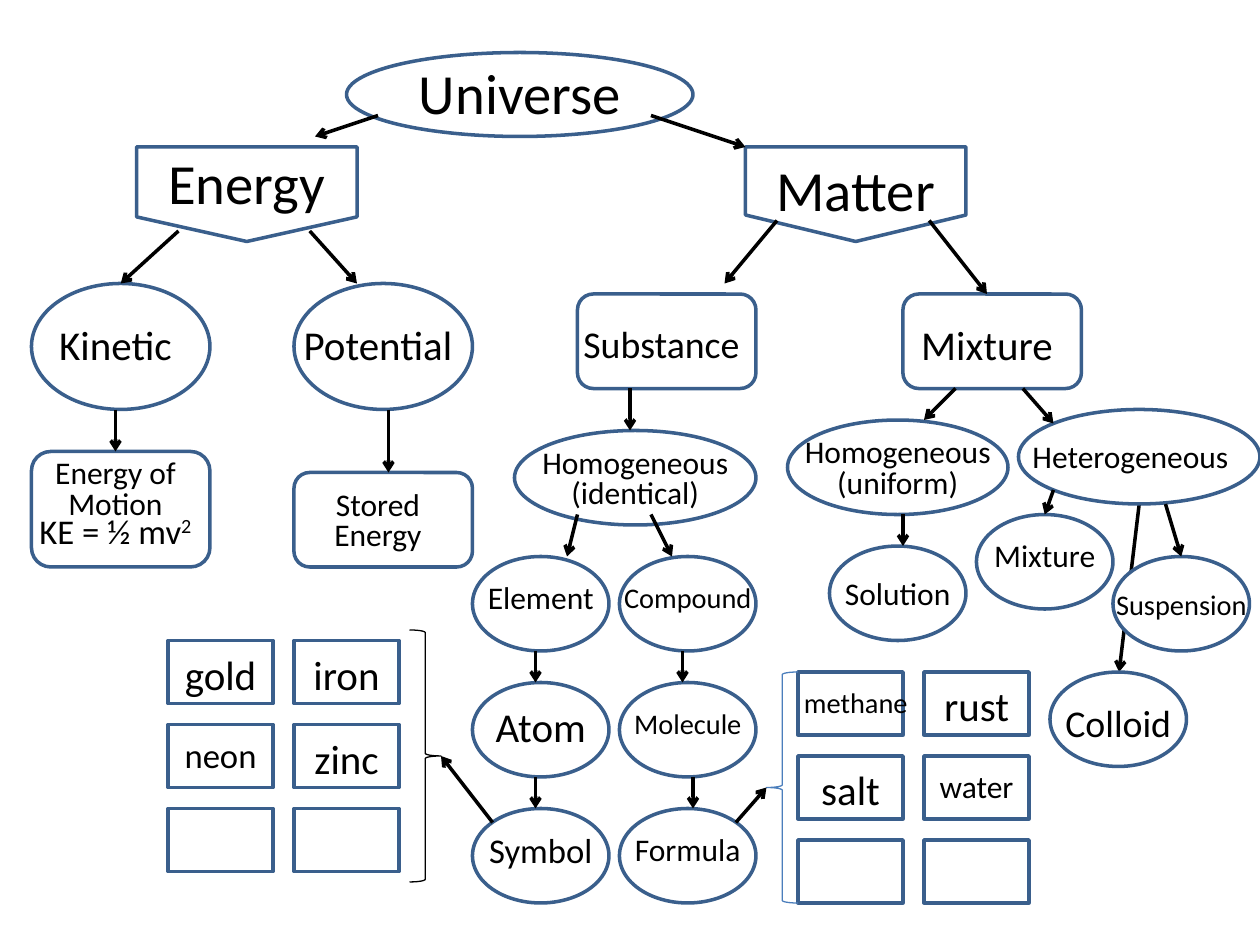
import pptx
import pptx.dml.color
import pptx.enum.shapes
import pptx.enum.text
import pptx.oxml.ns
import pptx.util
from lxml import etree

Pt = pptx.util.Pt
SHAPE = pptx.enum.shapes.MSO_SHAPE
COLORS = {"outline": "3A5F8C", "brace": "4B7EBC", "ink": "000000", "paper": "FFFFFF"}
FONT = "Calibri"

ELEMENT_X, COMPOUND_X = 270, 354
CHAIN_ROWS = [318, 390, 462]
OVAL_SIZE = (78, 54)
TILE_SIZE = (60, 36)
TILE_STEP_X, TILE_STEP_Y = 72, 48
ELEMENT_TILES = (96, 366)
COMPOUND_TILES = (456, 384)

LARGE_OVALS = [
    (198, 30, 198, 48),
    (18, 162, 102, 72), (168, 162, 102, 72),
    (294, 246, 138, 54), (450, 240, 126, 54), (582, 234, 138, 54),
]
MIXTURE_OVALS = [(474, 312), (558, 294), (600, 384)]
SUSPENSION_OVAL = (636, 318)
ROUNDED_BOXES = [
    (330, 168, 102, 54), (516, 168, 102, 54),
    (168, 270, 102, 54), (18, 258, 102, 66),
]
PENTAGONS = [((114, 48, 54, 126), 0.26), ((462, 48, 54, 126), 0.28)]

COLLOID_ARROW = (651, 288, 639.5, 384)
ARROWS = [
    (216, 66, 180, 78), (372, 66, 426, 84),
    (102, 132, 69, 162), (177, 132, 204, 162),
    (66, 234, 66, 258), (222, 234, 222, 270),
    (444, 126, 414, 162), (531, 126, 564, 168),
    (546, 222, 528, 240), (584.5, 222, 602, 242),
    (666, 288, 675, 318), (516, 294, 516, 312), (602, 280, 597, 294),
    (360, 222, 360, 246), (330, 294, 324, 318), (372, 294, 384, 318),
    (306, 372, 306, 390), (306, 444, 306, 462),
    (390, 372, 390, 390), (396, 444, 396, 462),
    (281.5, 470, 252, 432), (420.5, 470, 438, 450),
]

LABELS = [
    ("Universe", (222, 30, 150, 45), 32.4, 1),
    ("Energy", (66, 84, 150, 45), 32.4, 0.9),
    ("Matter", (414, 88, 150, 45), 32.4, 0.9),
    ("Kinetic", (12, 174, 108, 45), 23.4, 1),
    ("Potential", (162, 174, 108, 45), 23.4, 1),
    ("Substance", (324, 174, 108, 45), 21.6, 1),
    ("Mixture", (510, 174, 108, 45), 23.4, 1),
    ("Energy of Motion", (12, 258, 108, 45), 18, 0.8),
    ("Stored Energy", (162, 276, 108, 45), 18, 0.8),
    ("Homogeneous (identical)", (300, 252, 126, 45), 18, 0.8),
    ("Homogeneous (uniform)", (450, 246, 126, 45), 18, 0.8),
    ("Heterogeneous ", (582, 240, 132, 45), 18, 0.8),
    ("Solution", (474, 322, 78, 38), 18, 0.8),
    ("Mixture", (558, 300, 78, 38), 18, 0.8),
    ("Suspension", (630, 328, 90, 38), 16.2, 0.8),
    ("Colloid", (600, 394, 78, 38), 21.6, 1),
    ("Element", (270, 324, 78, 38), 18, 0.8),
    ("Compound", (348, 324, 90, 38), 16.2, 0.8),
    ("Atom", (270, 396, 78, 38), 23.4, 1),
    ("Molecule", (354, 396, 78, 38), 16.2, 0.8),
    ("Symbol", (270, 468, 78, 38), 19.8, 0.9),
    ("Formula", (354, 468, 78, 38), 18, 0.8),
    ("gold", (96, 366, 60, 38), 23.4, 1),
    ("iron", (168, 366, 60, 38), 23.4, 1),
    ("neon", (96, 414, 60, 38), 19.8, 0.9),
    ("zinc", (168, 414, 60, 38), 23.4, 1),
    ("methane", (450, 384, 78, 38), 16.2, 0.8),
    ("rust", (528, 384, 60, 38), 23.4, 1),
    ("salt", (456, 432, 60, 38), 23.4, 1),
    ("water", (528, 432, 60, 38), 18, 0.8),
]


def color(name):
    return pptx.dml.color.RGBColor.from_string(COLORS[name])


def add_outline(slide, kind, box, line="outline", width=2, fill=None):
    shape = slide.shapes.add_shape(kind, *map(Pt, box))
    shape.shadow.inherit = False
    if fill:
        shape.fill.solid()
        shape.fill.fore_color.rgb = color(fill)
    else:
        shape.fill.background()
    shape.line.color.rgb = color(line)
    shape.line.width = Pt(width)
    return shape


def add_pentagon(slide, box, depth):
    shape = add_outline(slide, SHAPE.PENTAGON, box)
    shape.rotation = 90
    shape.adjustments[0] = depth


def add_tiles(slide, origin):
    left, top = origin
    for row in range(3):
        for column in range(2):
            position = (left + column * TILE_STEP_X, top + row * TILE_STEP_Y)
            add_outline(slide, SHAPE.RECTANGLE, position + TILE_SIZE)


def add_arrow(slide, points):
    connector = slide.shapes.add_connector(
        pptx.enum.shapes.MSO_CONNECTOR.STRAIGHT, *map(Pt, points))
    connector.line.color.rgb = color("ink")
    connector.line.width = Pt(2)
    qn = pptx.oxml.ns.qn
    properties = connector.element.spPr
    etree.SubElement(properties.find(qn("a:ln")), qn("a:tailEnd"), type="arrow")
    etree.SubElement(properties, qn("a:effectLst"))


def add_run(paragraph, text, size):
    run = paragraph.add_run()
    run.text = text
    run.font.name = FONT
    run.font.size = Pt(size)
    run.font.color.rgb = color("ink")
    return run


def add_label(slide, text, box, size, spacing):
    frame = slide.shapes.add_textbox(*map(Pt, box)).text_frame
    frame.word_wrap = True
    frame.vertical_anchor = pptx.enum.text.MSO_ANCHOR.MIDDLE
    paragraph = frame.paragraphs[0]
    paragraph.alignment = pptx.enum.text.PP_ALIGN.CENTER
    paragraph.line_spacing = spacing
    add_run(paragraph, text, size)
    return paragraph


def add_kinetic_formula(slide):
    paragraph = add_label(slide, "KE = ½ mv", (12, 282, 108, 45), 19.8, 0.9)
    exponent = add_run(paragraph, "2", 19.8)
    exponent.font._element.set("baseline", "30000")


def main():
    presentation = pptx.Presentation()
    presentation.slide_width = Pt(720)
    presentation.slide_height = Pt(540)
    slide = presentation.slides.add_slide(presentation.slide_layouts[6])

    add_arrow(slide, COLLOID_ARROW)
    chain = [(x, y) for x in (ELEMENT_X, COMPOUND_X) for y in CHAIN_ROWS]
    small_ovals = [position + OVAL_SIZE for position in chain + MIXTURE_OVALS]
    for box in LARGE_OVALS + small_ovals:
        add_outline(slide, SHAPE.OVAL, box)
    for box in ROUNDED_BOXES:
        add_outline(slide, SHAPE.ROUNDED_RECTANGLE, box)
    for box, depth in PENTAGONS:
        add_pentagon(slide, box, depth)
    for origin in (ELEMENT_TILES, COMPOUND_TILES):
        add_tiles(slide, origin)
    add_outline(slide, SHAPE.OVAL, SUSPENSION_OVAL + OVAL_SIZE, fill="paper")
    add_outline(slide, SHAPE.RIGHT_BRACE, (234, 360, 18, 144), "ink", 0.75)
    add_outline(slide, SHAPE.LEFT_BRACE, (438, 384, 18, 132), "brace", 0.75)
    for points in ARROWS:
        add_arrow(slide, points)
    for label in LABELS:
        add_label(slide, *label)
    add_kinetic_formula(slide)

    presentation.save("out.pptx")


if __name__ == "__main__":
    main()
